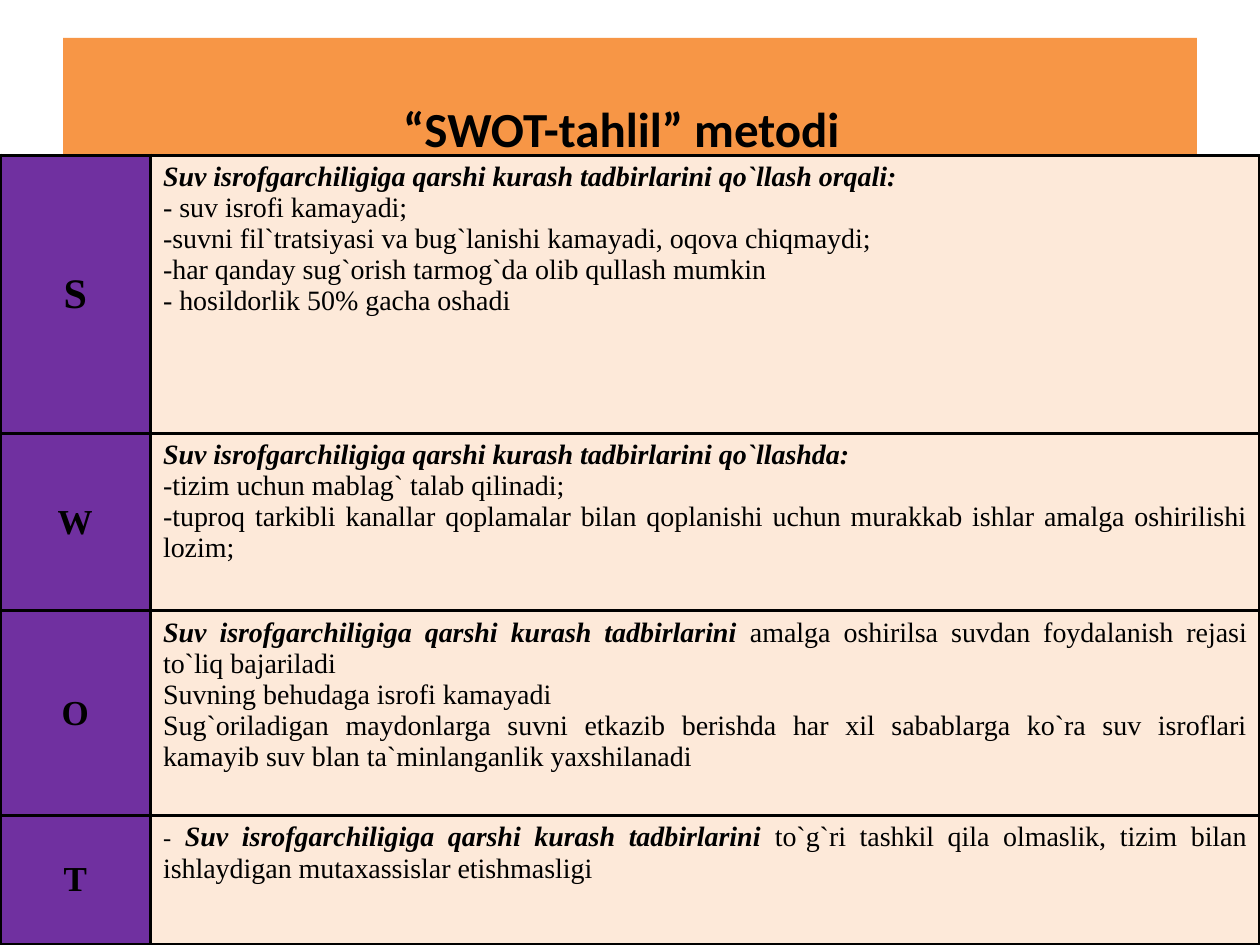
from dataclasses import dataclass, field
from typing import NamedTuple

from lxml.etree import SubElement as Sub
from pptx import Presentation
from pptx.dml.color import RGBColor as Rgb
from pptx.enum.text import MSO_ANCHOR as Anchor, PP_ALIGN as Align
from pptx.oxml.ns import qn
from pptx.util import Pt


@dataclass(frozen=True)
class Theme:
    """Colours, fonts and type styles of the slide."""
    black: str = "000000"
    orange: str = "F79646"
    purple: str = "7030A0"
    cream: str = "FDE9D9"
    serif: str = "Times New Roman"
    sans: str = "Calibri"
    edge: float = 2
    styles: dict = field(default_factory=lambda: {
        "title": {"size": Pt(28), "bold": True},
        "space": {"size": Pt(44), "bold": False},
        "first": {"size": Pt(24), "bold": True},
        "letter": {"size": Pt(20), "bold": True},
        "lead": {"size": Pt(16), "bold": True, "italic": True},
        "body": {"size": Pt(16), "bold": False, "italic": False},
        "dash": {"size": Pt(14), "bold": False},
    })


class Part(NamedTuple):
    """A piece of text with its style."""
    text: str
    style: str = "body"


class Row(NamedTuple):
    """One SWOT row: its letter, height and paragraphs."""
    mark: Part
    high: float
    paras: list[list[Part]]


LOOK = Theme()
LEAD = "Suv isrofgarchiligiga qarshi kurash tadbirlarini"
WIDTHS = (86, 634)
ROWS = [
    Row(Part("S", "first"), 159, [
        [Part(f"{LEAD} qo`llash orqali:", "lead")],
        [Part("- suv isrofi kamayadi;")],
        [Part("-suvni fil`tratsiyasi va bug`lanishi kamayadi, oqova chiqmaydi;")],
        [Part("-har qanday sug`orish tarmog`da olib qullash mumkin")],
        [Part("- hosildorlik 50% gacha oshadi ")],
    ]),
    Row(Part("W", "letter"), 101.5, [
        [Part(f"{LEAD} qo`llashda:", "lead")],
        [Part("-tizim uchun mablag` talab qilinadi;")],
        [Part("-tuproq tarkibli kanallar qoplamalar bilan qoplanishi uchun "
              "murakkab ishlar amalga oshirilishi lozim; ")],
    ]),
    Row(Part("O", "letter"), 117, [
        [Part(f"{LEAD} ", "lead"),
         Part("amalga oshirilsa suvdan foydalanish rejasi to`liq bajariladi")],
        [Part("Suvning behudaga isrofi kamayadi")],
        [Part("Sug`oriladigan maydonlarga suvni etkazib berishda har xil sabablarga "
              "ko`ra suv isroflari kamayib suv blan ta`minlanganlik yaxshilanadi")],
    ]),
    Row(Part("T", "letter"), 73.5, [
        [Part("-", "dash"), Part(f" {LEAD}", "lead"),
         Part(" to`g`ri tashkil qila olmaslik, tizim bilan ishlaydigan "
              "mutaxassislar etishmasligi ")],
    ]),
]


def paint(item, tone: str) -> None:
    """Give a shape or cell a solid fill."""
    item.fill.solid()
    item.fill.fore_color.rgb = Rgb.from_string(tone)


def write(frame, paras: list[list[Part]], align: Align, face: str) -> None:
    """Fill a text frame with styled paragraphs."""
    for i, parts in enumerate(paras):
        para = frame.add_paragraph() if i else frame.paragraphs[0]
        para.alignment = align
        for part in parts:
            run = para.add_run()
            run.text = part.text
            run.font.color.rgb = Rgb.from_string(LOOK.black)
            for key, value in {"name": face, **LOOK.styles[part.style]}.items():
                setattr(run.font, key, value)


def frame_cell(cell) -> None:
    """Draw the four borders of a cell, ahead of its fill."""
    props = cell._tc.get_or_add_tcPr()
    for side in ("lnL", "lnR", "lnT", "lnB"):
        line = Sub(props, qn(f"a:{side}"), w=str(Pt(LOOK.edge)))
        Sub(Sub(line, qn("a:solidFill")), qn("a:srgbClr"), val=LOOK.black)


def add_title(slide) -> None:
    """Place and fill the title."""
    title = slide.shapes.title
    place = {"left": 36, "top": 21.6, "width": 648, "height": 90}
    for key, value in place.items():
        setattr(title, key, Pt(value))
    paint(title, LOOK.orange)
    title.text_frame.vertical_anchor = Anchor.MIDDLE
    parts = [Part("“SWOT-tahlil” metodi", "title"), Part(" ", "space")]
    write(title.text_frame, [parts], Align.CENTER, LOOK.sans)


def add_grid(slide, rows: list[Row]) -> None:
    """Build the SWOT table."""
    high = sum(row.high for row in rows)
    grid = slide.shapes.add_table(len(rows), len(WIDTHS), Pt(0), Pt(88.6),
                                  Pt(sum(WIDTHS)), Pt(high)).table
    for key in ("first_row", "horz_banding"):
        setattr(grid, key, False)
    for col, wide in zip(grid.columns, WIDTHS):
        col.width = Pt(wide)
    for i, row in enumerate(rows):
        grid.rows[i].height = Pt(row.high)
        looks = (
            ([[row.mark]], LOOK.purple, Align.CENTER, Anchor.MIDDLE),
            (row.paras, LOOK.cream, Align.JUSTIFY, Anchor.TOP),
        )
        for j, (paras, tone, align, anchor) in enumerate(looks):
            cell = grid.cell(i, j)
            frame_cell(cell)
            paint(cell, tone)
            cell.vertical_anchor = anchor
            write(cell.text_frame, paras, align, LOOK.serif)


def main() -> None:
    """Build and save the slide."""
    deck = Presentation()
    deck.slide_width, deck.slide_height = Pt(720), Pt(540)
    slide = deck.slides.add_slide(deck.slide_layouts[5])
    add_title(slide)
    add_grid(slide, ROWS)
    deck.save("out.pptx")


if __name__ == "__main__":
    main()
